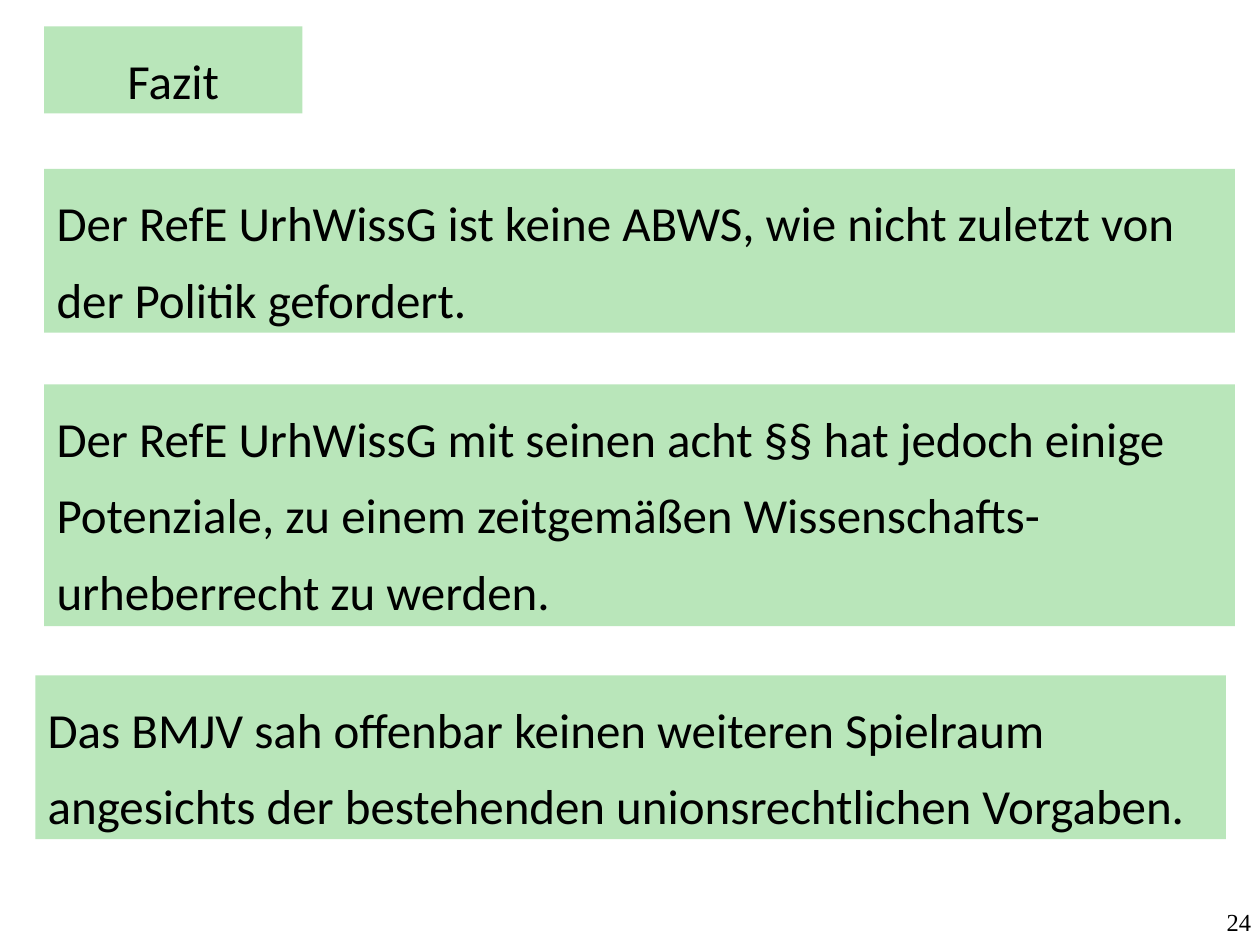
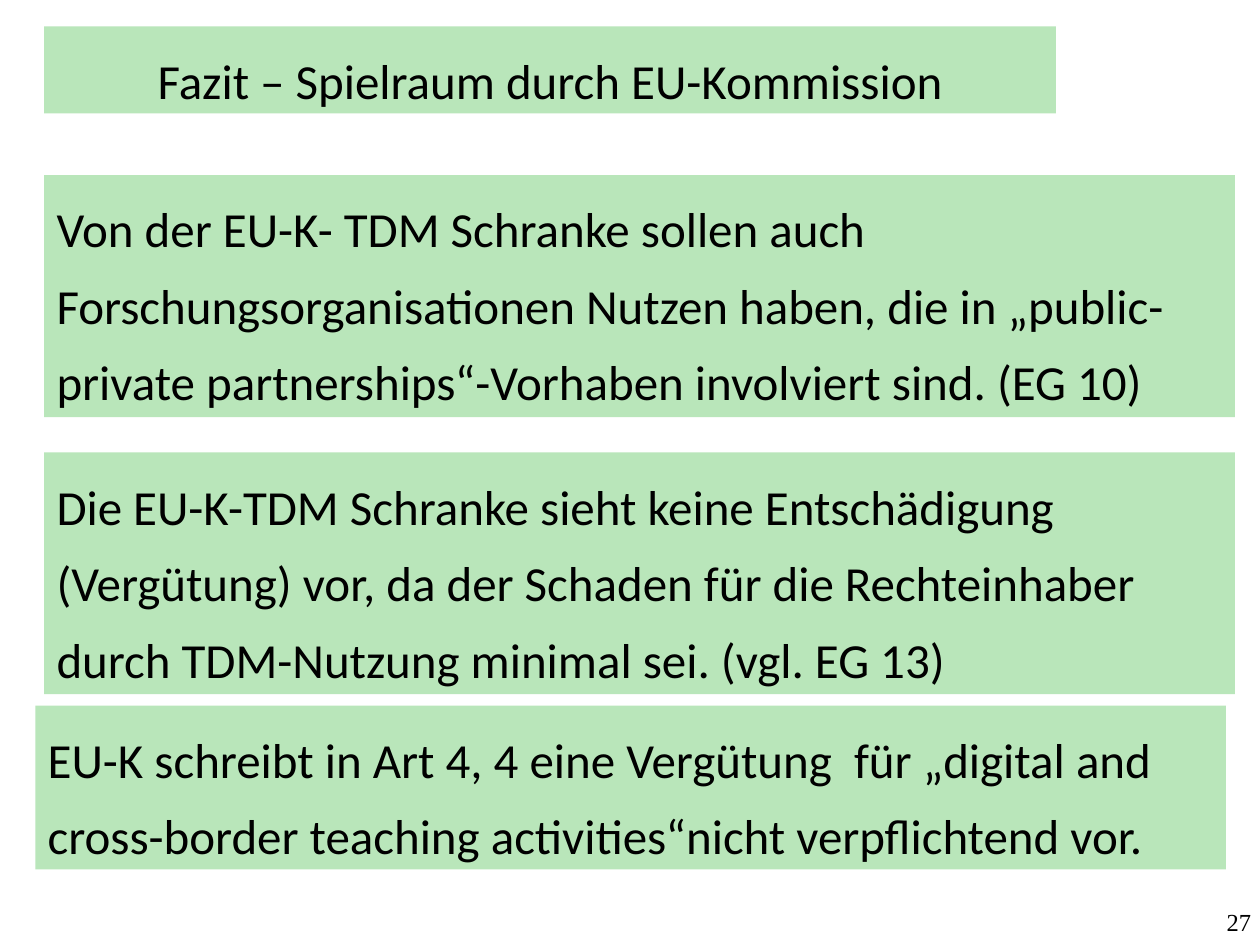
from pptx import Presentation
from pptx import util as u
from pptx.dml import color
from pptx.enum import shapes, text

GREEN = "B9E6BA"
BLACK = "000000"
LEFT, LAST_LEFT = 0.35, 0.28
TITLE_TOP, TITLE_HEIGHT = 0.21, 0.69
STATEMENT_WIDTH = 9.45
STATEMENT_HEIGHTS = {2: 1.3, 3: 1.92}  # by number of text lines

# Each slide: title, title width, page number, statements (top, lines, wording)
SLIDES = [
    ("Fazit", 2.05, "24", [
        (1.34, 2, "Der RefE UrhWissG ist keine ABWS, wie nicht zuletzt von "
                  "der Politik gefordert."),
        (3.05, 3, "Der RefE UrhWissG mit seinen acht §§ hat jedoch einige "
                  "Potenziale, zu einem zeitgemäßen "
                  "Wissenschafts-urheberrecht zu werden."),
        (5.36, 2, "Das BMJV sah offenbar keinen weiteren Spielraum "
                  "angesichts der bestehenden unionsrechtlichen Vorgaben."),
    ]),
    ("Fazit – Spielraum durch EU-Kommission", 8.03, "27", [
        (1.39, 3, "Von der EU-K- TDM Schranke sollen auch "
                  "Forschungsorganisationen Nutzen haben, die in "
                  "„public-private partnerships“-Vorhaben involviert sind. "
                  "(EG 10)"),
        (3.59, 3, "Die EU-K-TDM Schranke sieht keine Entschädigung "
                  "(Vergütung) vor, da der Schaden für die Rechteinhaber "
                  "durch TDM-Nutzung minimal sei. (vgl. EG 13)"),
        (5.6, 2, "EU-K schreibt in Art 4, 4 eine Vergütung  für „digital and "
                 "cross-border teaching activities“nicht verpflichtend vor."),
    ]),
]


def add_words(shape, words, font_name, size, alignment):
    shape.text_frame.word_wrap = True
    paragraph = shape.text_frame.paragraphs[0]
    paragraph.alignment = alignment
    run = paragraph.add_run()
    run.text = words
    run.font.name = font_name
    run.font.size = u.Pt(size)
    run.font.color.rgb = color.RGBColor.from_string(BLACK)
    return paragraph


def add_panel(slide, left, top, width, height, words, alignment):
    panel = slide.shapes.add_shape(
        shapes.MSO_SHAPE.RECTANGLE,
        u.Inches(left), u.Inches(top), u.Inches(width), u.Inches(height))
    panel.shadow.inherit = False
    panel.fill.solid()
    panel.fill.fore_color.rgb = color.RGBColor.from_string(GREEN)
    panel.line.fill.background()
    panel.text_frame.vertical_anchor = text.MSO_ANCHOR.TOP
    panel.text_frame.auto_size = text.MSO_AUTO_SIZE.SHAPE_TO_FIT_TEXT
    paragraph = add_words(panel, words, "Calibri", 28, alignment)
    paragraph.line_spacing = 1.3


presentation = Presentation()
presentation.slide_width = u.Inches(10)
presentation.slide_height = u.Inches(7.5)

for title, title_width, page_number, statements in SLIDES:
    slide = presentation.slides.add_slide(presentation.slide_layouts[6])

    # Page number at the bottom right
    number_box = slide.shapes.add_textbox(
        u.Inches(9.25), u.Inches(6.98), u.Inches(0.68), u.Inches(0.52))
    frame = number_box.text_frame
    frame.margin_left = frame.margin_right = frame.margin_top = 0
    frame.margin_bottom = u.Inches(0.07)
    frame.vertical_anchor = text.MSO_ANCHOR.BOTTOM
    add_words(number_box, page_number, "Times New Roman", 14,
              text.PP_ALIGN.RIGHT)

    # Title panel
    add_panel(slide, LEFT, TITLE_TOP, title_width, TITLE_HEIGHT, title,
              text.PP_ALIGN.CENTER)

    # Statements, the last one set slightly further left
    for index, (top, lines, words) in enumerate(statements, start=1):
        left = LAST_LEFT if index == len(statements) else LEFT
        add_panel(slide, left, top, STATEMENT_WIDTH, STATEMENT_HEIGHTS[lines],
                  words, text.PP_ALIGN.LEFT)

presentation.save("out.pptx")
